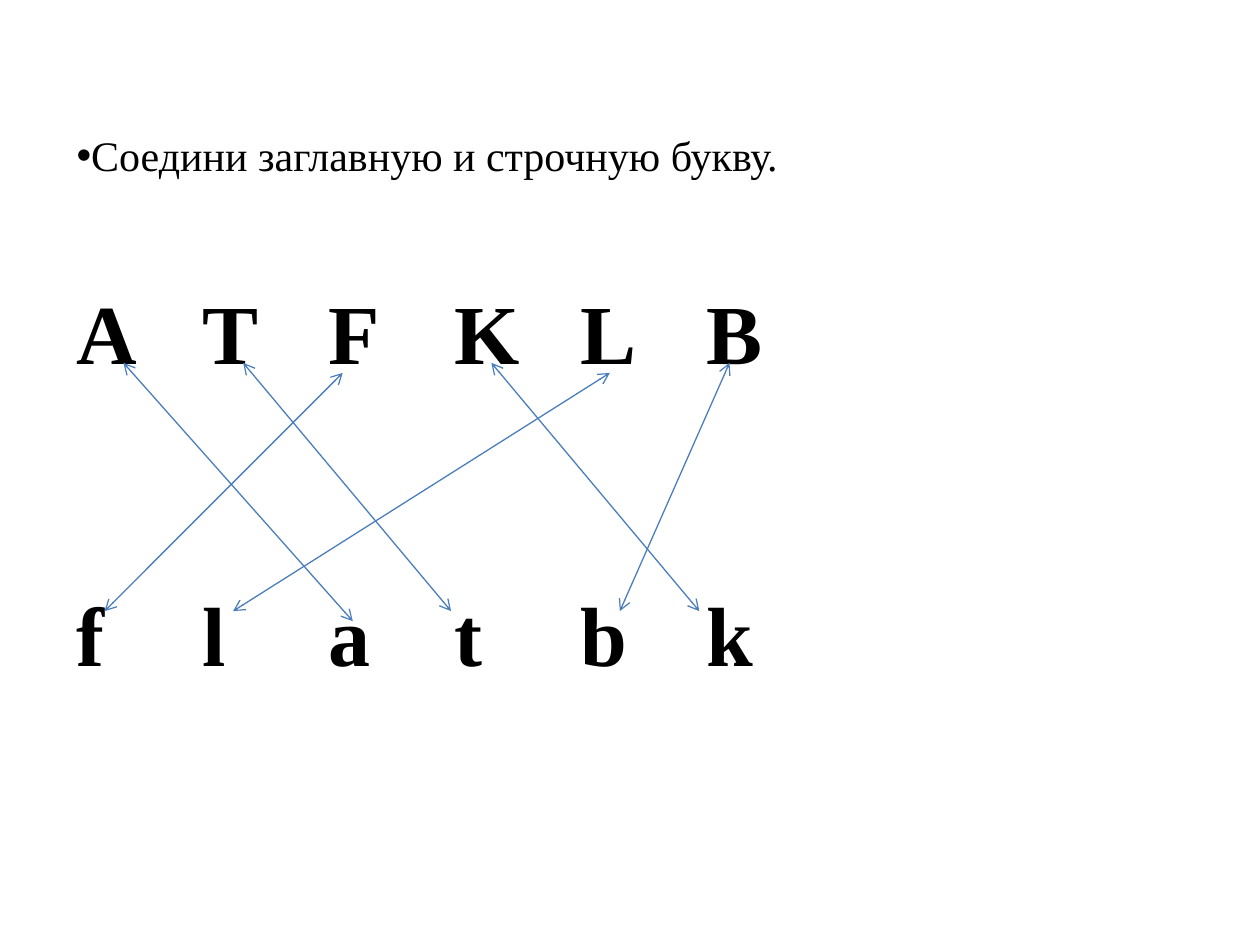
"""Build a slide that matches capital letters with their lowercase forms."""
from lxml.etree import SubElement
from pptx import Presentation
from pptx.dml.color import RGBColor
from pptx.enum.shapes import MSO_CONNECTOR
from pptx.enum.text import MSO_ANCHOR
from pptx.oxml.ns import qn
from pptx.util import Inches, Pt

BLACK = RGBColor(0x00, 0x00, 0x00)
BLUE = RGBColor(0x4B, 0x7E, 0xBC)
FONT = "Times New Roman"
COLUMN = Inches(1)
TEXT_LEFT = Inches(0.61)
INSET = Inches(0.1)
UPPER_ROW = Inches(2.88)
LOWER_ROW = Inches(4.85)
STEP = Inches(0.08)


def write_paragraph(paragraph, text, size, bold=False, space_before=0, bullet=None):
    run = paragraph.add_run()
    run.text = text
    run.font.name = FONT
    run.font.size = Pt(size)
    run.font.bold = bold
    run.font.color.rgb = BLACK
    paragraph.space_before = Pt(space_before)
    properties = paragraph._p.get_or_add_pPr()
    if bullet:
        SubElement(properties, qn("a:buFont"), typeface="Arial")
        SubElement(properties, qn("a:buChar"), char=bullet)
    tab_count = text.count("\t")
    if tab_count:
        tab_list = SubElement(properties, qn("a:tabLst"))
        for column in range(1, tab_count + 1):
            SubElement(tab_list, qn("a:tab"), pos=str(column * COLUMN), algn="l")


presentation = Presentation()
presentation.slide_width = Inches(10)
presentation.slide_height = Inches(7.5)
slide = presentation.slides.add_slide(presentation.slide_layouts[6])

text_box = slide.shapes.add_textbox(
    TEXT_LEFT - INSET, Inches(0.95), Inches(9.06), Inches(4.54)
)
text_frame = text_box.text_frame
text_frame.word_wrap = True
text_frame.vertical_anchor = MSO_ANCHOR.BOTTOM
text_frame.margin_bottom = Inches(0.07)
write_paragraph(
    text_frame.paragraphs[0], "Соедини заглавную и строчную букву.", 24, bullet="•"
)
for letters, space_before in (("ATFKLB", 57), ("flatbk", 115)):
    write_paragraph(
        text_frame.add_paragraph(), "\t".join(letters), 48,
        bold=True, space_before=space_before,
    )

letter_pairs = {
    "A": (0.37, 0, 2.19, 1),
    "T": (1.32, 0, 2.97, 0),
    "F": (2.11, 1, 0.22, 0),
    "K": (3.29, 0, 4.94, 0),
    "L": (4.23, 1, 1.24, 0),
    "B": (5.18, 0, 4.31, 0),
}
for start, start_step, end, end_step in letter_pairs.values():
    arrow = slide.shapes.add_connector(
        MSO_CONNECTOR.STRAIGHT,
        int(TEXT_LEFT + start * COLUMN), UPPER_ROW + start_step * STEP,
        int(TEXT_LEFT + end * COLUMN), LOWER_ROW + end_step * STEP,
    )
    arrow.line.color.rgb = BLUE
    arrow.line.width = Pt(0.75)
    for tip in ("a:headEnd", "a:tailEnd"):
        SubElement(arrow.line._get_or_add_ln(), qn(tip), type="arrow")
    SubElement(arrow._element.spPr, qn("a:effectLst"))

presentation.save("out.pptx")
